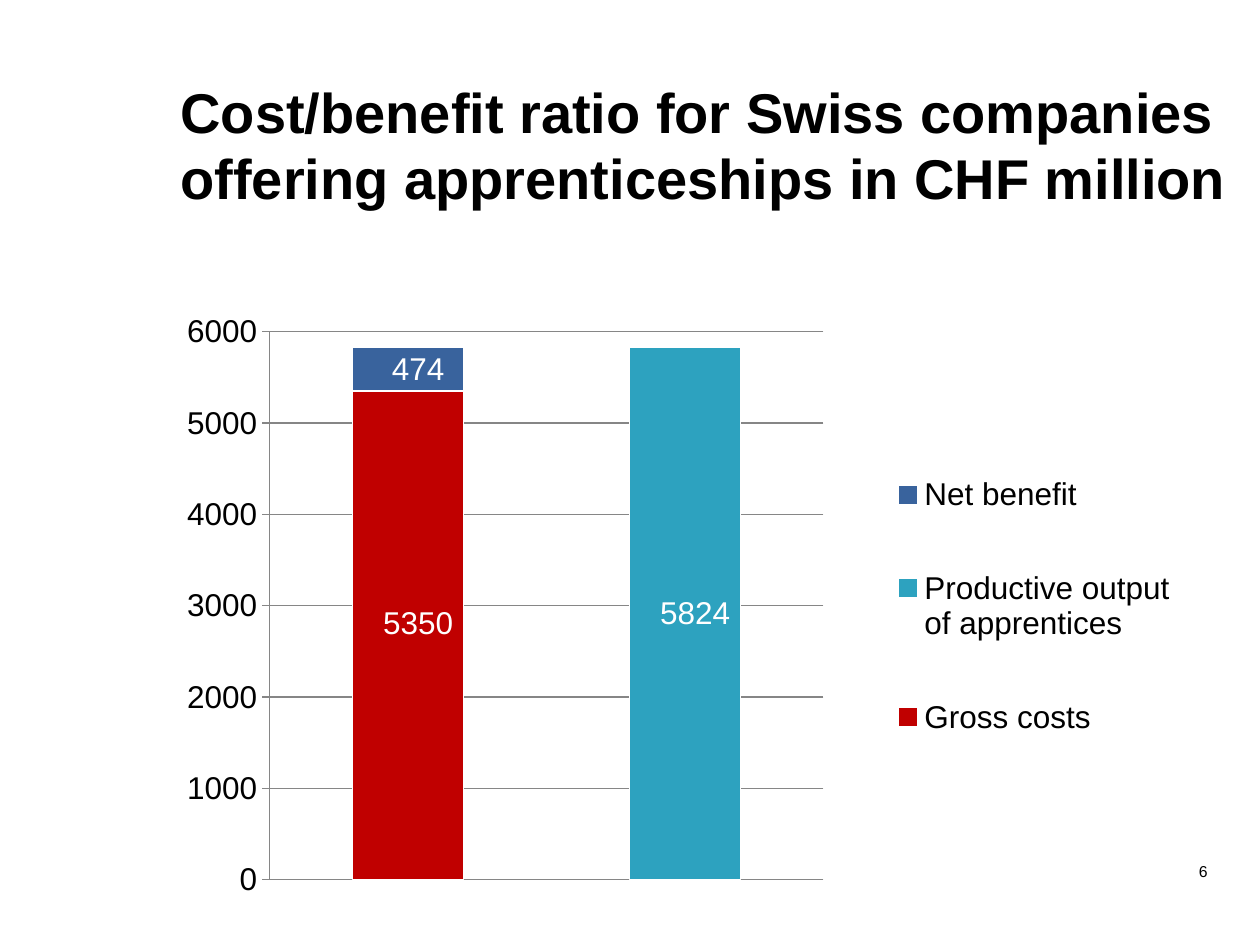
from dataclasses import dataclass

import lxml.etree
import pptx
import pptx.chart.data
import pptx.dml.color
import pptx.enum.chart
import pptx.enum.text
import pptx.oxml
import pptx.oxml.ns
import pptx.util

EMU_PER_PX = 914400 // 126
FONT = "Arial"
BLACK, WHITE, GRID = "000000", "FFFFFF", "868686"


@dataclass(frozen=True)
class Box:
    left: int
    top: int
    width: int
    height: int

    def emu(self) -> list[int]:
        return [px * EMU_PER_PX for px in (self.left, self.top, self.width, self.height)]


@dataclass(frozen=True)
class TextItem:
    text: str
    box: Box
    size: int
    line_spacing: int
    bold: bool
    alignment: pptx.enum.text.PP_ALIGN


@dataclass(frozen=True)
class Series:
    name: str
    values: tuple
    color: str
    label_point: int
    label_shift: tuple[float, float]


TEXTS = [
    TextItem("6", Box(912, 854, 308, 50), 9, 12, False, pptx.enum.text.PP_ALIGN.RIGHT),
    TextItem("Cost/benefit ratio for Swiss companies offering apprenticeships in CHF million",
             Box(168, 72, 1108, 98), 32, 38, True, pptx.enum.text.PP_ALIGN.LEFT),
]
CHART_BOX = Box(174, 304, 1018, 604)
SERIES = [
    Series("Gross costs", (5350, None), "C00000", 0, (0.01, -0.02)),
    Series("Productive output of apprentices", (None, 5824), "2DA2BF", 1, (0.01, 0)),
    Series("Net benefit", (474, None), "39639D", 0, (0.01, 0)),
]


def rgb(color: str) -> pptx.dml.color.RGBColor:
    return pptx.dml.color.RGBColor.from_string(color)


def style_font(font, size: int, color: str, bold: bool = False) -> None:
    font.name = FONT
    font.size = pptx.util.Pt(size)
    font.bold = bold
    font.color.rgb = rgb(color)


def style_line(line, color: str) -> None:
    line.color.rgb = rgb(color)
    line.width = pptx.util.Pt(0.75)


def add_text(slide, item: TextItem) -> None:
    text_frame = slide.shapes.add_textbox(*item.box.emu()).text_frame
    text_frame.word_wrap = True
    text_frame.text = item.text
    paragraph = text_frame.paragraphs[0]
    paragraph.alignment = item.alignment
    paragraph.line_spacing = pptx.util.Pt(item.line_spacing)
    style_font(paragraph.runs[0].font, item.size, BLACK, item.bold)


def manual_layout(**values) -> lxml.etree._Element:
    """Return a c:layout element; the keywords are child tags in schema order."""
    children = "".join(f'<c:{tag} val="{value}"/>' for tag, value in values.items())
    return pptx.oxml.parse_xml(
        f'<c:layout {pptx.oxml.ns.nsdecls("c")}><c:manualLayout>{children}'
        "</c:manualLayout></c:layout>")


def replace_layout(parent, layout, following: str) -> None:
    """Put the layout in front of the first child with the tag named by following."""
    for old in parent.findall(pptx.oxml.ns.qn("c:layout")):
        parent.remove(old)
    parent.find(pptx.oxml.ns.qn(following)).addprevious(layout)


def style_series(chart_series, series: Series) -> None:
    chart_series.format.fill.solid()
    chart_series.format.fill.fore_color.rgb = rgb(series.color)
    style_line(chart_series.format.line, WHITE)
    labels = chart_series.data_labels
    labels.show_value = True
    style_font(labels.font, 18, WHITE)
    flags = "".join(f'<c:show{name} val="{int(name == "Val")}"/>' for name in
                    ("LegendKey", "Val", "CatName", "SerName", "Percent", "BubbleSize"))
    label = pptx.oxml.parse_xml(
        f'<c:dLbl {pptx.oxml.ns.nsdecls("c")}><c:idx val="{series.label_point}"/>'
        f"{flags}</c:dLbl>")
    x, y = series.label_shift
    replace_layout(label, manual_layout(x=x, y=y), "c:showLegendKey")
    labels._element.insert(0, label)


def add_chart(slide) -> None:
    data = pptx.chart.data.CategoryChartData()
    data.categories = ["1", "2"]
    for series in SERIES:
        data.add_series(series.name, series.values)
    chart = slide.shapes.add_chart(
        pptx.enum.chart.XL_CHART_TYPE.COLUMN_STACKED, *CHART_BOX.emu(), data).chart
    chart.has_title = False
    style_font(chart.font, 18, BLACK)

    plot = chart.plots[0]
    plot.gap_width, plot.overlap = 150, 100
    plot.vary_by_categories = False
    for chart_series, series in zip(plot.series, SERIES):
        style_series(chart_series, series)

    chart.category_axis.visible = False
    axis = chart.value_axis
    axis.minimum_scale, axis.maximum_scale, axis.major_unit = 0, 6000, 1000
    axis.major_tick_mark = pptx.enum.chart.XL_TICK_MARK.OUTSIDE
    axis.minor_tick_mark = pptx.enum.chart.XL_TICK_MARK.NONE
    axis.has_major_gridlines = True
    style_line(axis.format.line, GRID)
    style_line(axis.major_gridlines.format.line, GRID)

    chart.has_legend = True
    chart.legend.position = pptx.enum.chart.XL_LEGEND_POSITION.RIGHT
    chart.legend.include_in_layout = False
    style_font(chart.legend.font, 18, BLACK)
    replace_layout(chart.legend._element, manual_layout(
        xMode="edge", yMode="edge", x=0.7, y=0.19, w=0.29, h=0.62), "c:overlay")
    plot_area = chart._chartSpace.chart.plotArea
    replace_layout(plot_area, manual_layout(
        layoutTarget="inner", xMode="edge", yMode="edge",
        x=0.094, y=0.046, w=0.544, h=0.907), "c:barChart")


def main() -> None:
    presentation = pptx.Presentation()
    presentation.slide_width = pptx.util.Inches(10)
    presentation.slide_height = pptx.util.Inches(7.5)
    slide = presentation.slides.add_slide(presentation.slide_layouts[6])
    for item in TEXTS:
        add_text(slide, item)
    add_chart(slide)
    presentation.save("out.pptx")


if __name__ == "__main__":
    main()
